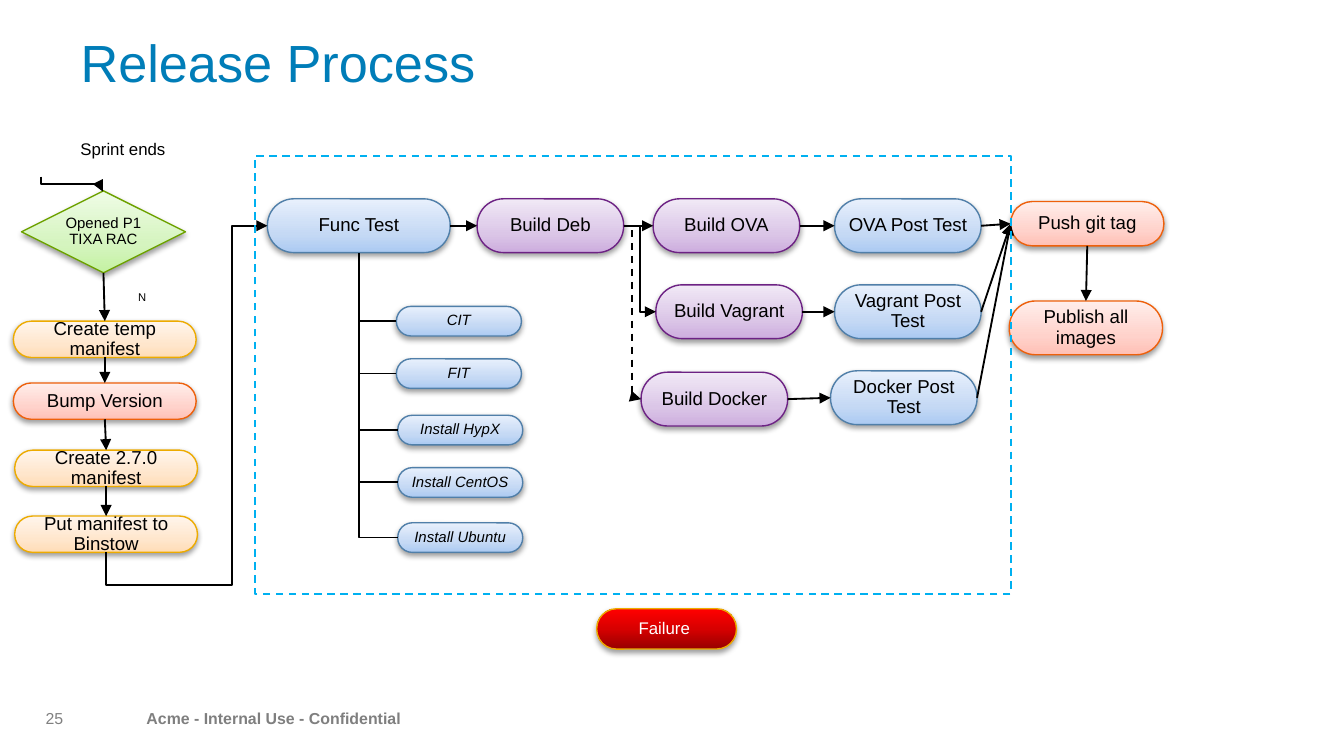
from copy import deepcopy
from dataclasses import dataclass

from lxml import etree
from pptx import Presentation
from pptx import util as u
from pptx.dml.color import RGBColor
from pptx.enum import dml, shapes, text
from pptx.oxml import ns

CELL = 0.1
COLS = 100
ROWS = COLS * 9 / 16


@dataclass(frozen=True)
class Tone:
    stops: tuple
    line: str
    ink: str = "000000"


@dataclass(frozen=True)
class Theme:
    font = "Arial"
    ink = "000000"
    title = "007DB8"
    foot = "7F7F7F"
    page = "808080"
    frame = "00B0F0"
    head = 28
    body = 10
    label = 9
    note = 8.5
    small = 8
    tiny = 6
    blue = Tone(("ABCAF2", "C5D9F4", "E8F0FC"), "507FA9")
    green = Tone(("C4F2A2", "D5F4BF", "EFFCE6"), "6DA200")
    gold = Tone(("FFDCB6", "FFE6CC", "FFF5EC"), "EDAB00")
    coral = Tone(("FFC0B5", "FFD2CB", "FFEEEB"), "EE600B")
    plum = Tone(("CDADDE", "DBC6E7", "F1E9F6"), "6D2284")
    red = Tone(("970000", "D70000", "FF0000"), "EDAB00", "FFFFFF")


T = Theme()


@dataclass(frozen=True)
class Node:
    text: str
    x: float
    y: float
    w: float
    h: float
    tone: Tone
    size: float = T.body
    italic: bool = False
    form: int = shapes.MSO_SHAPE.ROUNDED_RECTANGLE
    mid: float = 0.35

    def side(self, name: str) -> tuple:
        dx, dy = {"l": (0, 0.5), "r": (1, 0.5), "t": (0.5, 0), "b": (0.5, 1)}[name]
        return self.x + self.w * dx, self.y + self.h * dy


def grid(*cells: float) -> list:
    return [u.Inches(c * CELL) for c in cells]


def rgb(code: str) -> RGBColor:
    return RGBColor.from_string(code)


def sub(root, tag: str, **attrs: str):
    return etree.SubElement(root, ns.qn(tag), attrs)


def write(shape, words: str, *, size: float, color: str = T.ink, align=text.PP_ALIGN.LEFT,
          anchor=text.MSO_ANCHOR.TOP, inset: tuple = (1, 0.5), wrap: bool = True,
          pitch: float = 1, bold: bool = False, italic: bool = False) -> None:
    frame = shape.text_frame
    frame.word_wrap = wrap
    frame.auto_size = text.MSO_AUTO_SIZE.NONE
    frame.vertical_anchor = anchor
    frame.margin_left = frame.margin_right = grid(inset[0])[0]
    frame.margin_top = frame.margin_bottom = grid(inset[1])[0]
    para = frame.paragraphs[0]
    para.alignment = align
    para.line_spacing = pitch
    run = para.add_run()
    run.text = words
    font = run.font
    font.name, font.size = T.font, u.Pt(size)
    font.bold, font.italic = bold, italic
    font.color.rgb = rgb(color)


def shade(shape, node: Node) -> None:
    fill = shape.fill
    fill.gradient()
    fill.gradient_angle = 90
    stops = shape.element.spPr.find(".//" + ns.qn("a:gsLst"))
    stops.append(deepcopy(stops[-1]))
    for stop, code, place in zip(fill.gradient_stops, node.tone.stops, (0, node.mid, 1)):
        stop.color.rgb = rgb(code)
        stop.position = place


def draw(slide, node: Node) -> None:
    shape = slide.shapes.add_shape(node.form, *grid(node.x, node.y, node.w, node.h))
    if node.form == shapes.MSO_SHAPE.ROUNDED_RECTANGLE:
        shape.adjustments[0] = 0.49
    shade(shape, node)
    shape.line.color.rgb = rgb(node.tone.line)
    shape.line.width = u.Pt(0.75)
    shape.shadow.inherit = False
    glow = shape.element.spPr.find(ns.qn("a:effectLst"))
    drop = sub(glow, "a:outerShdw", blurRad=str(u.Pt(3.1)), dist=str(u.Pt(1.6)),
               dir="5400000", rotWithShape="0")
    sub(sub(drop, "a:srgbClr", val="000000"), "a:alpha", val="38000")
    write(shape, node.text, size=node.size, color=node.tone.ink, italic=node.italic,
          align=text.PP_ALIGN.CENTER, anchor=text.MSO_ANCHOR.MIDDLE, inset=(0, 0), pitch=0.9)


def link(slide, start: tuple, end: tuple, *, bends: int = 0, tip: str = "tail",
         dash: bool = False, turn: int = 0, bias: tuple = ()) -> None:
    kind = shapes.MSO_CONNECTOR.ELBOW if bends else shapes.MSO_CONNECTOR.STRAIGHT
    line = slide.shapes.add_connector(kind, *grid(*start, *end))
    line.line.color.rgb = rgb(T.ink)
    line.line.width = u.Pt(1)
    if dash:
        line.line.dash_style = dml.MSO_LINE.DASH
    props = line.element.spPr
    if bends:
        geom = props.find(ns.qn("a:prstGeom"))
        geom.set("prst", f"bentConnector{bends + 1}")
        for i, share in enumerate(bias, 1):
            sub(geom.find(ns.qn("a:avLst")), "a:gd", name=f"adj{i}",
                fmla=f"val {round(share * 100000)}")
    if turn:
        props.find(ns.qn("a:xfrm")).set("rot", str(turn * 60000))
    if tip:
        sub(props.find(ns.qn("a:ln")), f"a:{tip}End", type="triangle")
    sub(props, "a:effectLst")


def label(slide, words: str, box: tuple, **form) -> None:
    write(slide.shapes.add_textbox(*grid(*box)), words, **form)


def main() -> None:
    deck = Presentation()
    deck.slide_width, deck.slide_height = grid(COLS, ROWS)
    slide = deck.slides.add_slide(deck.slide_layouts[5])

    title = slide.shapes.title
    title.left, title.top, title.width, title.height = grid(5, 2.3, 90, 9.4)
    write(title, "Release Process", size=T.head, color=T.title, pitch=0.9)

    foot = dict(size=T.note, anchor=text.MSO_ANCHOR.MIDDLE, inset=(0, 0), wrap=False, pitch=0.9)
    label(slide, "Acme - Internal Use - Confidential", (10.9, 52.9, 18, 1.3),
          color=T.foot, bold=True, **foot)
    label(slide, "25", (3.2, 52.9, 1.5, 1.3), color=T.page, align=text.PP_ALIGN.RIGHT, **foot)
    label(slide, "N", (9.3, 21.1, 2.6, 1.8), size=T.tiny)
    label(slide, "Sprint ends", (5, 9.8, 11, 2.5), size=T.label)

    gate = Node("Opened P1 TIXA RAC", 1.6, 14.2, 12.2, 6.1, T.green, T.small,
                form=shapes.MSO_SHAPE.DIAMOND)
    steps = [Node(words, x, y, 13.6, 2.7, tone) for words, x, y, tone in (
        ("Create temp manifest", 1, 23.9, T.gold),
        ("Bump Version", 1, 28.5, T.coral),
        ("Create 2.7.0 manifest", 1.1, 33.5, T.gold),
        ("Put manifest to Binstow", 1.1, 38.4, T.gold))]
    func = Node("Func Test", 19.9, 14.8, 13.6, 4, T.blue)
    tests = [Node(words, x, y, 9.3, 2.2, T.blue, T.small, True) for words, x, y in (
        ("CIT", 29.5, 22.8), ("FIT", 29.5, 26.7), ("Install HypX", 29.6, 30.9),
        ("Install CentOS", 29.6, 34.8), ("Install Ubuntu", 29.6, 38.9))]
    deb, *builds = [Node("Build " + words, x, y, 10.9, 4, T.plum) for words, x, y in (
        ("Deb", 35.5, 14.8), ("OVA", 48.6, 14.8), ("Vagrant", 48.8, 21.2),
        ("Docker", 47.7, 27.7))]
    posts = [Node(words + " Post Test", x, y, 10.9, 4, T.blue) for words, x, y in (
        ("OVA", 62.1, 14.8), ("Vagrant", 62.1, 21.2), ("Docker", 61.8, 27.6))]
    push = Node("Push git tag", 75.2, 15, 11.4, 3.3, T.coral)
    ship = Node("Publish all images", 75.1, 22.4, 11.4, 4, T.coral)
    fail = Node("Failure ", 44.4, 45.3, 10.4, 3, T.red, T.label, mid=0.5)

    for node in (gate, *steps, func, *tests, deb, *builds, *posts, push, ship, fail):
        draw(slide, node)

    chain = [gate, *steps]
    for above, below in [*zip(chain, steps), (push, ship)]:
        link(slide, above.side("b"), below.side("t"))
    for left, right in [(func, deb), (deb, builds[0]), *zip(builds, posts),
                        *((post, push) for post in posts)]:
        link(slide, left.side("r"), right.side("l"))
    for test in tests:
        link(slide, test.side("l"), func.side("b"), bends=1, tip="")
    for build, dash in zip(builds[1:], (False, True)):
        link(slide, deb.side("r"), build.side("l"), bends=2, dash=dash)
    link(slide, func.side("l"), steps[-1].side("b"), bends=3, tip="head", bias=(0.22, 1.1))
    link(slide, (5.9, 11.4), (4.8, 16), bends=2, turn=270)

    frame = slide.shapes.add_shape(shapes.MSO_SHAPE.RECTANGLE, *grid(19, 11.6, 56.2, 32.6))
    frame.fill.background()
    frame.shadow.inherit = False
    frame.line.color.rgb = rgb(T.frame)
    frame.line.width = u.Pt(1)
    frame.line.dash_style = dml.MSO_LINE.DASH

    deck.save("out.pptx")


if __name__ == "__main__":
    main()
